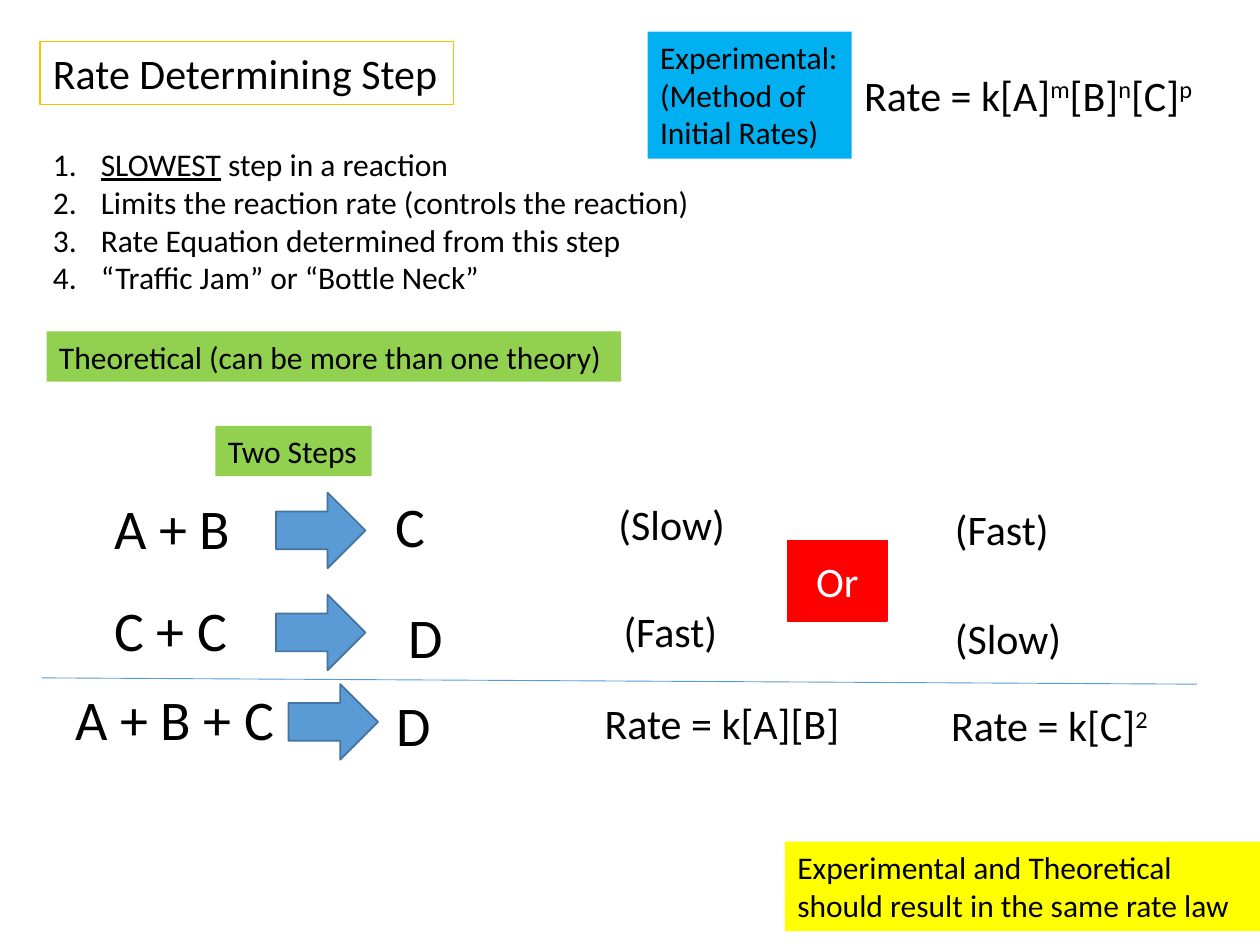
from lxml.etree import SubElement
from pptx import Presentation
from pptx.dml.color import RGBColor
from pptx.enum.shapes import MSO_CONNECTOR, MSO_SHAPE
from pptx.enum.text import MSO_ANCHOR, MSO_AUTO_SIZE, PP_ALIGN
from pptx.oxml.ns import qn
from pptx.util import Inches, Pt

BLACK = RGBColor(0x00, 0x00, 0x00)
WHITE = RGBColor(0xFF, 0xFF, 0xFF)
GOLD = RGBColor(0xFF, 0xC0, 0x00)
GREEN = RGBColor(0x92, 0xD0, 0x50)
SKY = RGBColor(0x00, 0xB0, 0xF0)
RED = RGBColor(0xFF, 0x00, 0x00)
YELLOW = RGBColor(0xFF, 0xFF, 0x00)
BLUE = RGBColor(0x5B, 0x9B, 0xD5)
DARK_BLUE = RGBColor(0x43, 0x73, 0x9E)

FACTS = [
    ("SLOWEST", " step in a reaction"),
    ("", "Limits the reaction rate (controls the reaction)"),
    ("", "Rate Equation determined from this step"),
    ("", "“Traffic Jam” or “Bottle Neck”"),
]
# Reactants, their left and top; arrow left and top; product, its left and top
REACTIONS = [
    ("A + B", 0.81, 3.87, 1.23, 2.19, 3.91, "C", 3.04, 3.85),
    ("C + C", 0.81, 4.68, 1.21, 2.19, 4.72, "D", 3.14, 4.73),
    ("A + B + C", 0.5, 5.38, 1.9, 2.29, 5.43, "D", 3.05, 5.43),
]
# Text between carets is superscript
RATES = [
    ("(Slow)", 4.81, 3.91, 1.05),
    ("(Fast)", 4.85, 4.76, 0.95),
    ("Rate = k[A][B]", 4.7, 5.49, 2.08),
    ("(Fast)", 7.48, 3.95, 0.95),
    ("(Slow)", 7.48, 4.81, 1.05),
    ("Rate = k[C]^2", 7.45, 5.5, 1.79),
    ("Rate = k[A]^m^[B]^n^[C]^p", 6.76, 0.5, 2.88),
]


def place(shape, left, top, width, height):
    shape.left, shape.top = Inches(left), Inches(top)
    shape.width, shape.height = Inches(width), Inches(height)


def style(paragraph, size, color=BLACK):
    paragraph.font.name = "Calibri"
    paragraph.font.size = Pt(size)
    paragraph.font.color.rgb = color


def paint(shape, fill, line):
    shape.fill.solid()
    shape.fill.fore_color.rgb = fill
    shape.line.color.rgb = line
    shape.line.width = Pt(1)


def add_title(slide):
    title = slide.shapes.title
    place(title, 0.32, 0.33, 3.28, 0.5)
    paint(title, WHITE, GOLD)
    frame = title.text_frame
    frame.text = "Rate Determining Step"
    frame.word_wrap = False
    frame.auto_size = MSO_AUTO_SIZE.NONE
    frame.vertical_anchor = MSO_ANCHOR.TOP
    frame.paragraphs[0].alignment = PP_ALIGN.LEFT
    style(frame.paragraphs[0], 24)


def add_facts(slide):
    body = slide.placeholders[1]
    place(body, 0.32, 1.1, 5.3, 1.31)
    frame = body.text_frame
    frame.word_wrap = False
    frame.auto_size = MSO_AUTO_SIZE.NONE
    for index, (underlined, plain) in enumerate(FACTS):
        paragraph = frame.add_paragraph() if index else frame.paragraphs[0]
        if underlined:
            run = paragraph.add_run()
            run.text = underlined
            run.font.underline = True
        paragraph.add_run().text = plain
        paragraph.space_before = Pt(0)
        properties = paragraph._p.get_or_add_pPr()
        properties.set("marL", str(Inches(0.38)))
        properties.set("indent", str(Inches(-0.38)))
        SubElement(properties, qn("a:buFont"), typeface="+mj-lt")
        SubElement(properties, qn("a:buAutoNum"), type="arabicPeriod")
        style(paragraph, 18)


def add_label(slide, text, left, top, width, height, size, fill=None, wrap=False):
    """Add a text box; pieces between carets become superscript."""
    label = slide.shapes.add_textbox(
        Inches(left), Inches(top), Inches(width), Inches(height))
    if fill is not None:
        label.fill.solid()
        label.fill.fore_color.rgb = fill
    frame = label.text_frame
    frame.word_wrap = wrap
    frame.auto_size = MSO_AUTO_SIZE.SHAPE_TO_FIT_TEXT
    for index, line in enumerate(text.split("\n")):
        paragraph = frame.add_paragraph() if index else frame.paragraphs[0]
        for position, piece in enumerate(line.split("^")):
            run = paragraph.add_run()
            run.text = piece
            if position % 2:
                run._r.get_or_add_rPr().set("baseline", "30000")
        style(paragraph, size)


def add_block(slide, preset, left, top, width, height, fill, line):
    block = slide.shapes.add_shape(
        preset, Inches(left), Inches(top), Inches(width), Inches(height))
    block.shadow.inherit = False
    paint(block, fill, line)
    return block


def add_reaction(slide, reactants, left, top, width, arrow_left, arrow_top,
                 product, product_left, product_top):
    add_label(slide, reactants, left, top, width, 0.64, 32)
    add_block(slide, MSO_SHAPE.RIGHT_ARROW, arrow_left, arrow_top, 0.71, 0.6,
              BLUE, DARK_BLUE)
    product_width = 0.44 if product == "C" else 0.48
    add_label(slide, product, product_left, product_top, product_width, 0.64, 32)


def add_sum_line(slide):
    line = slide.shapes.add_connector(
        MSO_CONNECTOR.STRAIGHT, Inches(0.33), Inches(5.38), Inches(9.5), Inches(5.43))
    line.line.color.rgb = BLUE
    line.line.width = Pt(0.5)
    SubElement(line._element.spPr, qn("a:effectLst"))


def add_or(slide):
    choice = add_block(slide, MSO_SHAPE.RECTANGLE, 6.25, 4.29, 0.79, 0.64, RED, RED)
    frame = choice.text_frame
    frame.text = "Or"
    frame.vertical_anchor = MSO_ANCHOR.MIDDLE
    frame.paragraphs[0].alignment = PP_ALIGN.CENTER
    style(frame.paragraphs[0], 24, WHITE)


def main():
    deck = Presentation()
    deck.slide_width, deck.slide_height = Inches(10), Inches(7.5)
    slide = deck.slides.add_slide(deck.slide_layouts[1])
    add_title(slide)
    add_facts(slide)
    add_label(slide, "Two Steps", 1.71, 3.38, 1.24, 0.4, 18, GREEN)
    for reaction in REACTIONS:
        add_reaction(slide, *reaction)
    add_sum_line(slide)
    for text, left, top, width in RATES:
        add_label(slide, text, left, top, width, 0.5, 24)
    add_or(slide)
    add_label(slide, "Experimental:\n(Method of Initial Rates)",
              5.14, 0.25, 1.62, 1.01, 18, SKY, wrap=True)
    add_label(slide, "Theoretical (can be more than one theory)",
              0.37, 2.63, 4.56, 0.4, 18, GREEN)
    add_label(slide, "Experimental and Theoretical should result in the same rate law",
              6.23, 6.68, 3.77, 0.71, 18, YELLOW, wrap=True)
    deck.save("out.pptx")


if __name__ == "__main__":
    main()
